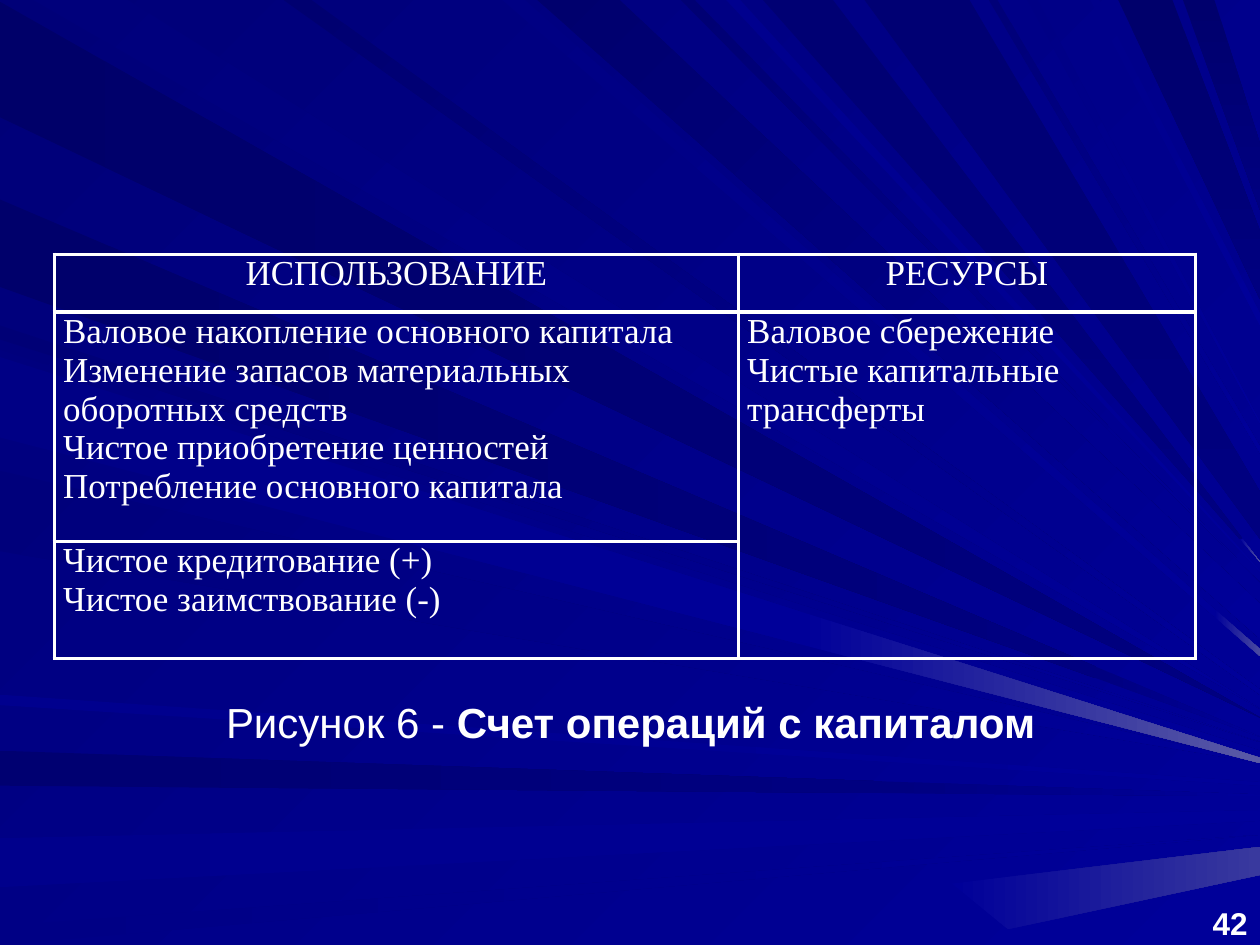
import pptx
import pptx.dml.color
import pptx.enum.text
import pptx.oxml
import pptx.oxml.ns
import pptx.util

Pt = pptx.util.Pt
RGB = pptx.dml.color.RGBColor
ALIGN = pptx.enum.text.PP_ALIGN
ANCHOR = pptx.enum.text.MSO_ANCHOR

WHITE = RGB(255, 255, 255)
NAVY = RGB(0, 0, 0x80)
BLUE = RGB(0, 0, 0x99)
HAZE = RGB(0x39, 0x39, 0x9E)
MIST = RGB(0x4A, 0x4A, 0xA1)
GLOW = RGB(0x5A, 0x5A, 0xA6)
BACK_DARK = RGB(0, 0, 0x78)

# Groups of rays: edge they start from, end colour, gradient angle, rays.
# A ray: its two places on that edge, its two heights on the right edge,
# its starting blue, and for a two-part ray the cut and the tail's end colour.
RAY_GROUPS = [
    ("left", NAVY, 0, [(1, 67, 410, 410, 105), (429, 449, 454, 455, 113, 0.7, BLUE),
                       (114, 164, 421, 421, 107, 0.87, BLUE)]),
    ("top", BLUE, 45, [(73, 19, 405, 405, 123)]),
    ("left", BLUE, 0, [(479, 507, 463, 469, 140), (529, 540, 477, 477, 133)]),
    ("top", BLUE, 45, [(300, 287, 371, 375, 131, 0.94, MIST), (354, 307, 345, 365, 109),
                       (397, 389, 333, 333, 115)]),
    ("top", NAVY, 90, [(476, 436, 321, 321, 115, 0.96, GLOW), (670, 639, 132, 171, 107),
                       (694, 676, 82, 120, 109)]),
    ("left", BLUE, 45, [(186, 194, 424, 424, 118), (200, 246, 429, 433, 126),
                        (269, 315, 436, 436, 123)]),
    ("left", BLUE, 0, [(397, 403, 447, 449, 142)]),
    ("top", NAVY, 90, [(554, 494, 281, 308, 115)]),
    ("top", BLUE, 45, [(178, 162, 394, 397, 112), (423, 415, 326, 327, 142),
                       (570, 565, 255, 259, 120), (593, 587, 241, 242, 133),
                       (628, 623, 179, 186, 138)]),
    ("left", BLUE, 0, [(204, 250, 433, 436, 133, 0.635, GLOW)]),
]

HEADINGS = ["ИСПОЛЬЗОВАНИЕ", "РЕСУРСЫ"]
USES = [
    "Валовое накопление основного капитала",
    "Изменение запасов материальных оборотных средств",
    "Чистое приобретение ценностей",
    "Потребление основного капитала",
]
RESOURCES = ["Валовое сбережение", "Чистые капитальные трансферты"]
BALANCE = ["Чистое кредитование (+)", "Чистое заимствование (-)"]


def write(paragraph, text, font="Arial", size=24, bold=False, align=ALIGN.LEFT):
    """Append one formatted run to a paragraph."""
    paragraph.alignment = align
    run = paragraph.add_run()
    run.text = text
    run.font.name, run.font.size, run.font.bold = font, Pt(size), bold
    run.font.color.rgb = WHITE


def paint(fill, start, end, angle):
    fill.gradient()
    fill.gradient_angle = (360 - angle) % 360
    for stop, color in zip(fill.gradient_stops, (start, end)):
        stop.color.rgb = color


def add_ray(slide, corners, start, end, angle):
    outline = [(Pt(x), Pt(y)) for x, y in corners]
    builder = slide.shapes.build_freeform(*outline[0])
    builder.add_line_segments(outline[1:], close=True)
    ray = builder.convert_to_shape()
    ray.shadow.inherit = False
    ray.line.fill.background()
    paint(ray.fill, start, end, angle)


def between(near, far, share):
    return tuple(a + (b - a) * share for a, b in zip(near, far))


def add_background(slide, left, top, width):
    paint(slide.background.fill, BACK_DARK, BLUE, 45)
    for edge, end, angle, rays in RAY_GROUPS:
        for near_a, near_b, far_a, far_b, level, *tail in rays:
            near = [(left, top + place) if edge == "left" else (left + place, top)
                    for place in (near_a, near_b)]
            far = [(left + width, top + height) for height in (far_a, far_b)]
            cut = tail[0] if tail else 1
            middle = [between(a, b, cut) for a, b in zip(near, far)]
            add_ray(slide, near + middle[::-1], RGB(0, 0, level), end, angle)
            if tail:
                tail_start = BLUE if tail[1] != BLUE else end
                add_ray(slide, middle + far[::-1], tail_start, tail[1], 0)
    # Pale ray in the lower right corner
    right = left + width
    add_ray(slide, [(right, top + 484), (right, top + 500),
                    (right - 144, top + 531), (right - 176, top + 505)], BLUE, HAZE, 0)


def add_label(slide, left, top, width, height, runs, anchor=ANCHOR.TOP, **style):
    """Place a text box; runs are (text, bold) pairs."""
    frame = slide.shapes.add_textbox(Pt(left), Pt(top), Pt(width), Pt(height)).text_frame
    frame.word_wrap = True
    frame.vertical_anchor = anchor
    for text, bold in runs:
        write(frame.paragraphs[0], text, bold=bold, **style)


def add_borders(cell, width):
    properties = cell._tc.get_or_add_tcPr()
    for position, side in enumerate(("lnL", "lnR", "lnT", "lnB")):
        properties.insert(position, pptx.oxml.parse_xml(
            f'<a:{side} {pptx.oxml.ns.nsdecls("a")} w="{Pt(width)}">'
            f'<a:solidFill><a:srgbClr val="{WHITE}"/></a:solidFill></a:{side}>'))


def add_account(slide, left, top, width, height):
    row_heights = [33, 131, height - 164]
    column_widths = [391, width - 391]
    account = slide.shapes.add_table(3, 2, Pt(left), Pt(top), Pt(width), Pt(height)).table
    account.first_row = account.horz_banding = False
    for row, size in zip(account.rows, row_heights):
        row.height = Pt(size)
    for column, size in zip(account.columns, column_widths):
        column.width = Pt(size)

    for cell in account.iter_cells():
        cell.fill.background()
        add_borders(cell, 2.25)
        cell.margin_left = cell.margin_right = Pt(5)
        cell.margin_top = cell.margin_bottom = 0
    account.cell(1, 1).merge(account.cell(2, 1))

    contents = {(0, 0): HEADINGS[:1], (0, 1): HEADINGS[1:],
                (1, 0): USES, (1, 1): RESOURCES, (2, 0): BALANCE}
    for (row, column), lines in contents.items():
        paragraph = account.cell(row, column).text_frame.paragraphs[0]
        for number, line in enumerate(lines):
            if number:
                paragraph.add_line_break()
            write(paragraph, line, font="Times New Roman", size=20,
                  align=ALIGN.LEFT if row else ALIGN.CENTER)


def main():
    deck = pptx.Presentation()
    deck.slide_width, deck.slide_height = Pt(720), Pt(540)
    slide = deck.slides.add_slide(deck.slide_layouts[6])
    add_background(slide, 0, 0, 720)
    # Page number
    add_label(slide, 683.3, 514, 36.7, 28, [("42", True)],
              anchor=ANCHOR.BOTTOM, size=18, align=ALIGN.RIGHT)
    # Caption
    add_label(slide, 14.4, 394.6, 692, 36,
              [("Рисунок 6 ‑ ", False), ("Счет операций с капиталом", True)],
              align=ALIGN.CENTER)
    add_account(slide, 31, 145.4, 652, 231)
    deck.save("out.pptx")


if __name__ == "__main__":
    main()
